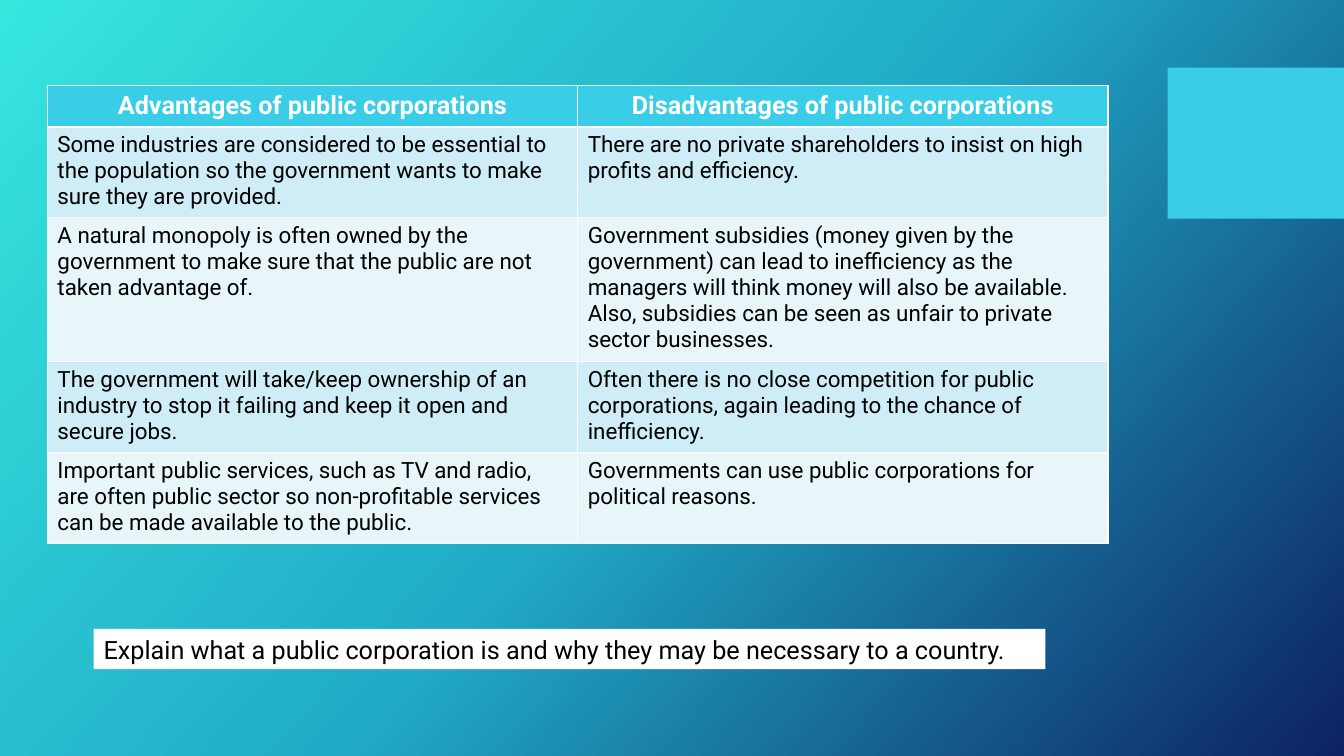
from copy import deepcopy

from pptx import Presentation
from pptx.dml.color import RGBColor
from pptx.enum.shapes import MSO_SHAPE as Shape
from pptx.enum.text import MSO_ANCHOR as Anchor, MSO_AUTO_SIZE as AutoSize, PP_ALIGN as Align
from pptx.oxml.ns import qn
from pptx.util import Inches, Pt

SLIDE_WIDTH, SLIDE_HEIGHT = 13.33, 7.5
FONT = "Roboto"
WHITE, BLACK, CYAN = "FFFFFF", "000000", "39CDE7"
BANDS = ("CEEDF6", "E8F6FA")
BACKDROP = ((0, "36E6DD"), (0.5, "21ABC8"), (1, "0C2263"))
BACKDROP_ANGLE = 42
ROW_HEIGHTS = (0.41, 0.9, 1.43, 0.9, 0.9)

HEADINGS = ("Advantages of public corporations", "Disadvantages of public corporations")
ARGUMENTS = (
    ("Some industries are considered to be essential to the population so the government "
     "wants to make sure they are provided.",
     "There are no private shareholders to insist on high profits and efficiency."),
    ("A natural monopoly is often owned by the government to make sure that the public are "
     "not taken advantage of.",
     "Government subsidies (money given by the government) can lead to inefficiency as the "
     "managers will think money will also be available. Also, subsidies can be seen as "
     "unfair to private sector businesses."),
    ("The government will take/keep ownership of an industry to stop it failing and keep it "
     "open and secure jobs.",
     "Often there is no close competition for public corporations, again leading to the "
     "chance of inefficiency."),
    ("Important public services, such as TV and radio, are often public sector so "
     "non-profitable services can be made available to the public.",
     "Governments can use public corporations for political reasons."),
)
QUESTION = "Explain what a public corporation is and why they may be necessary to a country."


def paint(fill, color):
    """Give a fill one solid colour."""
    fill.solid()
    fill.fore_color.rgb = RGBColor.from_string(color)


def write(frame, text, size, color, bold=False, align=Align.LEFT):
    """Put one formatted paragraph in a text frame."""
    paragraph = frame.paragraphs[0]
    paragraph.text = text
    paragraph.alignment = align
    font = paragraph.font
    font.name, font.size, font.bold = FONT, Pt(size), bold
    font.color.rgb = RGBColor.from_string(color)


def add_backdrop(slide):
    """Fill the slide background with the three-stop gradient."""
    fill = slide.background.fill
    fill.gradient()
    fill.gradient_angle = 360 - BACKDROP_ANGLE
    stops = slide.element.find(".//" + qn("a:gsLst"))
    stops.append(deepcopy(stops[-1]))
    for stop, (position, color) in zip(fill.gradient_stops, BACKDROP):
        stop.position = position
        stop.color.rgb = RGBColor.from_string(color)


def add_panel(slide, box, color):
    """Add a plain filled rectangle."""
    panel = slide.shapes.add_shape(Shape.RECTANGLE, *map(Inches, box))
    panel.shadow.inherit = False
    paint(panel.fill, color)
    panel.line.fill.background()
    return panel


def add_comparison(slide, box):
    """Add the table that sets advantages against disadvantages."""
    rows = (HEADINGS, *ARGUMENTS)
    table = slide.shapes.add_table(len(rows), len(HEADINGS), *map(Inches, box)).table
    for row, height in zip(table.rows, ROW_HEIGHTS):
        row.height = Inches(height)
    for r, texts in enumerate(rows):
        for c, text in enumerate(texts):
            cell = table.cell(r, c)
            if r == 0:
                paint(cell.fill, CYAN)
                write(cell.text_frame, text, 18, WHITE, True, Align.CENTER)
            else:
                paint(cell.fill, BANDS[(r - 1) % len(BANDS)])
                write(cell.text_frame, text, 16, BLACK)


def add_question(slide, box):
    """Add the white strip with the task for the class."""
    frame = add_panel(slide, box, WHITE).text_frame
    frame.word_wrap = True
    frame.auto_size = AutoSize.SHAPE_TO_FIT_TEXT
    frame.vertical_anchor = Anchor.TOP
    write(frame, QUESTION, 18, BLACK)


def main():
    """Build and save the slide."""
    deck = Presentation()
    deck.slide_width, deck.slide_height = Inches(SLIDE_WIDTH), Inches(SLIDE_HEIGHT)
    slide = deck.slides.add_slide(deck.slide_layouts[6])
    add_backdrop(slide)
    add_panel(slide, (SLIDE_WIDTH - 1.75, 0.67, 1.75, 1.5), CYAN)
    add_comparison(slide, (0.47, 0.85, 10.52, sum(ROW_HEIGHTS)))
    add_question(slide, (0.93, 6.24, 9.44, 0.4))
    deck.save("out.pptx")


if __name__ == "__main__":
    main()
